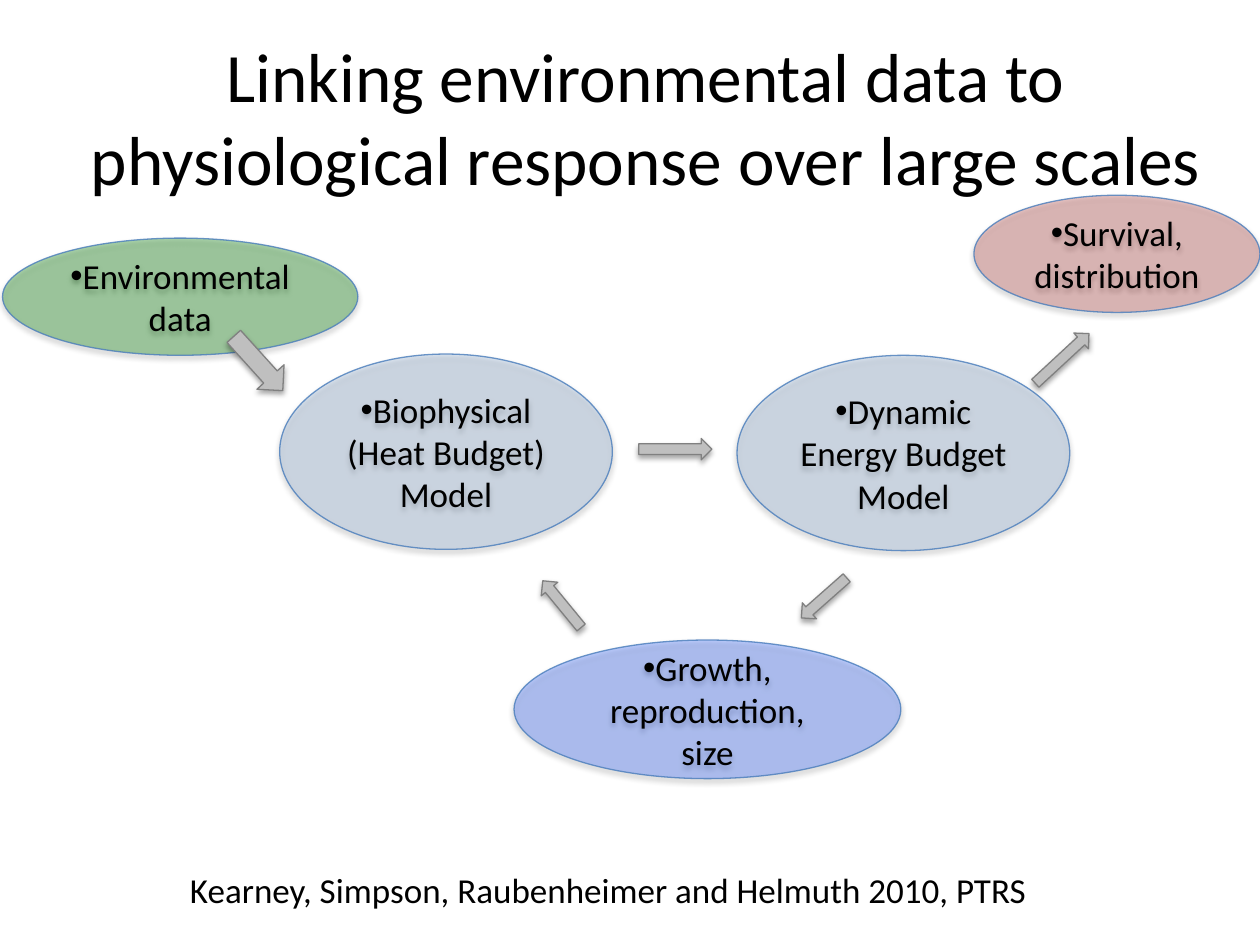
from lxml.etree import SubElement
from pptx import Presentation
from pptx.dml.color import RGBColor
from pptx.enum.shapes import MSO_SHAPE as Shape
from pptx.enum.text import MSO_ANCHOR as Anchor, PP_ALIGN as Align
from pptx.oxml.ns import qn
from pptx.util import Inches, Pt

FONT = {"name": "Calibri", "size": Pt(20), "bold": False}
INK = "000000"

# left, top, width, height, fill, text
OVALS = [
    (2.22, 2.81, 2.64, 1.55, "95B3D7", "Biophysical (Heat Budget) Model"),
    (5.85, 2.82, 2.64, 1.55, "95B3D7", "Dynamic Energy Budget Model"),
    (4.08, 5.08, 3.07, 1.1, "3366FF", "Growth, reproduction, size"),
    (0.02, 1.89, 2.82, 0.93, "008000", "Environmental data"),
    (7.73, 1.55, 2.27, 0.93, "C0504D", "Survival, distribution"),
]
# left, top, width, height, rotation
ARROWS = [
    (5.07, 3.48, 0.58, 0.17, 0),
    (6.3, 4.66, 0.48, 0.17, 138.5),
    (4.22, 4.71, 0.48, 0.17, 230.6),
    (1.76, 2.74, 0.58, 0.29, 47.9),
    (8.14, 2.76, 0.58, 0.17, 317.2),
]


def color(text):
    return RGBColor.from_string(text)


def style(para, **extra):
    for key, value in {**FONT, **extra}.items():
        setattr(para.font, key, value)
    para.font.color.rgb = color(INK)


def fade(part, pct):
    """Make the solid colour below an XML element partly transparent."""
    tone = part.find(qn("a:solidFill")).find(qn("a:srgbClr"))
    SubElement(tone, qn("a:alpha"), val=str(pct * 1000))


def shade(shape):
    """Give a shape a soft shadow straight below it."""
    shape.shadow.inherit = False
    effects = shape._element.spPr.find(qn("a:effectLst"))
    outer = SubElement(effects, qn("a:outerShdw"), blurRad=str(Pt(3.1)),
                       dist=str(Pt(1.8)), dir="5400000", rotWithShape="0")
    tone = SubElement(outer, qn("a:srgbClr"), val=INK)
    SubElement(tone, qn("a:alpha"), val="35000")


def add_form(slide, kind, box, fill, line):
    shape = slide.shapes.add_shape(kind, *map(Inches, box))
    shape.fill.solid()
    shape.fill.fore_color.rgb = color(fill)
    shape.line.color.rgb = color(line)
    shape.line.width = Pt(0.75)
    shade(shape)
    return shape


def add_oval(slide, box, fill, text):
    oval = add_form(slide, Shape.OVAL, box, fill, "4B7EBC")
    fade(oval._element.spPr, 32)
    fade(oval.line._get_or_add_ln(), 81)
    frame = oval.text_frame
    frame.word_wrap = True
    frame.vertical_anchor = Anchor.MIDDLE
    para = frame.paragraphs[0]
    para.text = text
    para.alignment = Align.CENTER
    props = para._p.get_or_add_pPr()
    props.set("marL", "0")
    props.set("indent", "0")
    SubElement(props, qn("a:buFont"), typeface="Arial")
    SubElement(props, qn("a:buChar"), char="•")
    style(para)


def add_arrow(slide, box, turn):
    arrow = add_form(slide, Shape.RIGHT_ARROW, box, "BFBFBF", "808080")
    arrow.rotation = turn


def add_title(slide, box, text):
    title = slide.shapes.title
    for key, value in zip(("left", "top", "width", "height"), box):
        setattr(title, key, Inches(value))
    frame = title.text_frame
    frame.text = text
    frame.word_wrap = True
    frame.vertical_anchor = Anchor.MIDDLE
    frame.paragraphs[0].alignment = Align.CENTER
    style(frame.paragraphs[0], size=Pt(39.6))


def add_cite(slide, box, text):
    frame = slide.shapes.add_textbox(*map(Inches, box)).text_frame
    frame.word_wrap = False
    frame.text = text
    style(frame.paragraphs[0])


def main():
    deck = Presentation()
    deck.slide_width, deck.slide_height = Inches(10), Inches(7.5)
    slide = deck.slides.add_slide(deck.slide_layouts[5])
    add_title(slide, (0.5, 0.3, 9.25, 1.25),
              "Linking environmental data to physiological response "
              "over large scales")
    add_cite(slide, (1.41, 6.84, 7.8, 0.44),
             "Kearney, Simpson, Raubenheimer and Helmuth 2010, PTRS")
    for *box, fill, text in OVALS:
        add_oval(slide, box, fill, text)
    for *box, turn in ARROWS:
        add_arrow(slide, box, turn)
    deck.save("out.pptx")


if __name__ == "__main__":
    main()
